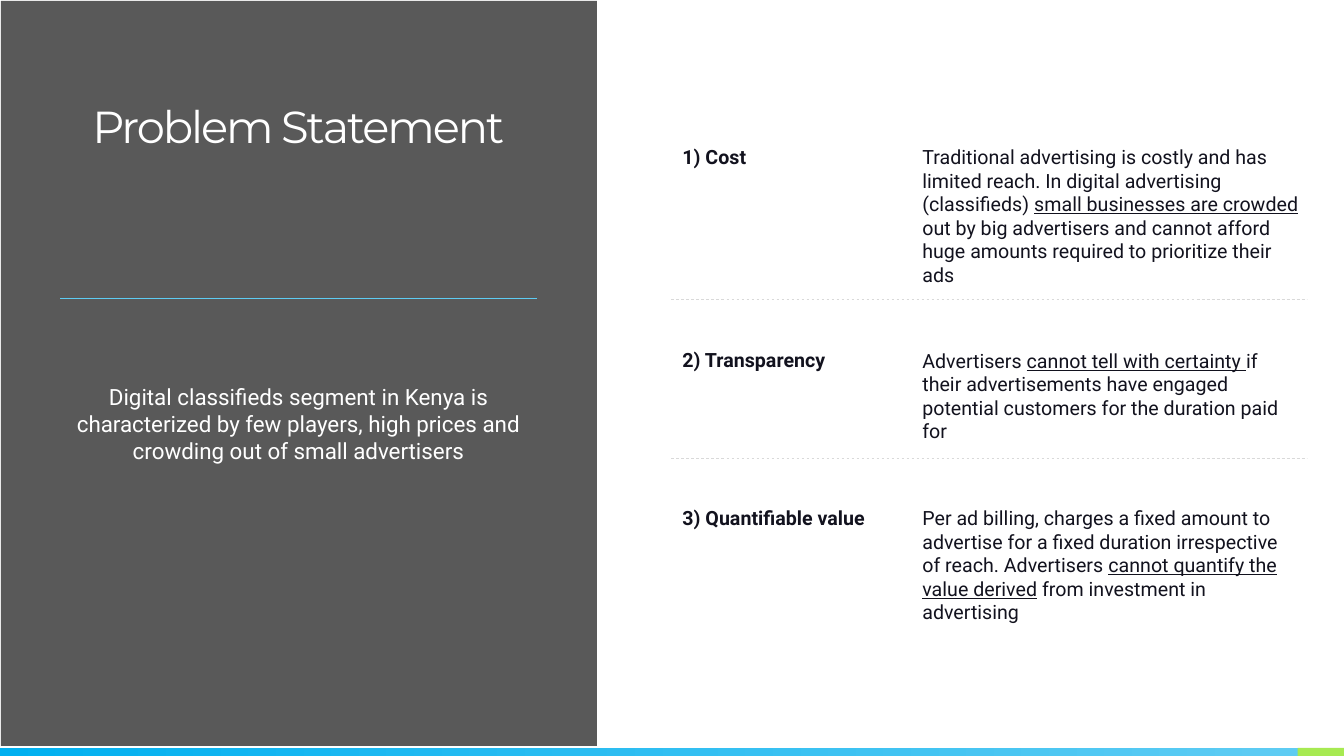
from pptx import Presentation
from pptx import util as u
from pptx.dml.color import RGBColor
from pptx.enum import dml, shapes, text
from pptx.oxml.ns import qn
from lxml import etree

COLORS = {
    "panel": "000000",
    "light": "FFFFFF",
    "ink": "12121E",
    "accent": "5ECCF3",
    "blue": "00B0F0",
    "green": "A7EA52",
    "divider": "D9D9D9",
}

PROBLEMS = [
    (1.39, 1.39, 1.37, "1) Cost", [
        "Traditional advertising is costly and has limited reach. "
        "In digital advertising (classifieds) ",
        "small businesses are crowded",
        " out by big advertisers and cannot afford huge amounts "
        "required to prioritize their ads"]),
    (3.4, 3.41, 1.03, "2) Transparency", [
        "Advertisers ",
        "cannot tell with certainty ",
        "if their advertisements have engaged potential customers "
        "for the duration paid for"]),
    (4.97, 4.97, 1.33, "3) Quantifiable value", [
        "Per ad billing, charges a fixed amount to advertise for a fixed "
        "duration irrespective of reach. Advertisers ",
        "cannot quantify the value derived",
        " from investment in advertising"]),
]


def rgb(name):
    return RGBColor.from_string(COLORS[name])


def add_block(slide, left, top, width, height, color):
    block = slide.shapes.add_shape(
        shapes.MSO_SHAPE.RECTANGLE, *map(u.Inches, (left, top, width, height)))
    block.shadow.inherit = False
    block.line.fill.background()
    block.fill.solid()
    block.fill.fore_color.rgb = rgb(color)
    return block


def add_rule(slide, left, right, y, color, dash=None):
    rule = slide.shapes.add_connector(
        shapes.MSO_CONNECTOR.STRAIGHT, *map(u.Inches, (left, y, right, y)))
    rule.line.width = u.Pt(0.5)
    rule.line.color.rgb = rgb(color)
    if dash:
        rule.line.dash_style = dash
    etree.SubElement(rule.element.spPr, qn("a:effectLst"))


def format_runs(paragraph, size, color, font="Roboto", bold=False):
    for run in paragraph.runs:
        run.font.size = u.Pt(size)
        run.font.name = font
        run.font.bold = bold
        run.font.color.rgb = rgb(color)


def add_text(slide, left, top, width, height, parts, size, color, bold=False):
    frame = slide.shapes.add_textbox(
        *map(u.Inches, (left, top, width, height))).text_frame
    frame.word_wrap = True
    paragraph = frame.paragraphs[0]
    for index, part in enumerate(parts):
        run = paragraph.add_run()
        run.text = part
        run.font.underline = index == 1
    format_runs(paragraph, size, color, bold=bold)
    return paragraph


def place_title(slide, wording):
    title = slide.shapes.title
    title.left, title.top, title.width, title.height = map(
        u.Inches, (0.6, 0.99, 4.72, 1.18))
    frame = title.text_frame
    frame.text = wording
    frame.word_wrap = True
    frame.auto_size = text.MSO_AUTO_SIZE.NONE
    frame.vertical_anchor = text.MSO_ANCHOR.TOP
    paragraph = frame.paragraphs[0]
    paragraph.alignment = text.PP_ALIGN.CENTER
    paragraph.line_spacing = 0.9
    format_runs(paragraph, 32, "light", "Montserrat")
    paragraph.runs[0].font._element.set("spc", "-150")


def add_footer(slide):
    bar = add_block(slide, 0, 7.42, 12.87, 0.08, "blue")
    bar.fill.gradient()
    bar.fill.gradient_angle = 0
    for stop, position, color in zip(
            bar.fill.gradient_stops, (0, 1), ("blue", "accent")):
        stop.position = position
        stop.color.rgb = rgb(color)
    add_block(slide, 12.87, 7.42, 0.46, 0.08, "green")


def add_panel(slide):
    panel = add_block(slide, 0.01, 0.01, 5.91, 7.39, "panel")
    tint = panel.element.spPr.find(qn("a:solidFill"))[0]
    etree.SubElement(tint, qn("a:alpha"), val="65000")
    slide.shapes.title.element.addprevious(panel.element)
    add_rule(slide, 0.6, 5.33, 2.96, "accent")
    summary = add_text(
        slide, 0.6, 3.75, 4.72, 0.91,
        ["Digital classifieds segment in Kenya is characterized by few "
         "players, high prices and crowding out of small advertisers"],
        16, "light")
    summary.alignment = text.PP_ALIGN.CENTER


def add_problem(slide, label_top, detail_top, detail_height, label, details):
    for paragraph in (
            add_text(slide, 6.67, label_top, 2.36, 0.35, [label], 14, "ink", True),
            add_text(slide, 9.05, detail_top, 3.94, detail_height,
                     details, 14, "ink")):
        paragraph.space_before = u.Pt(10)
        paragraph.space_after = u.Pt(5)


def main():
    deck = Presentation()
    deck.slide_width = u.Inches(13.33)
    deck.slide_height = u.Inches(7.5)
    slide = deck.slides.add_slide(deck.slide_layouts[5])
    add_footer(slide)
    add_panel(slide)
    place_title(slide, "Problem Statement")
    for problem in PROBLEMS:
        add_problem(slide, *problem)
    for y in (2.97, 4.55):
        add_rule(slide, 6.66, 12.96, y, "divider", dml.MSO_LINE.DASH)
    deck.save("out.pptx")


if __name__ == "__main__":
    main()
